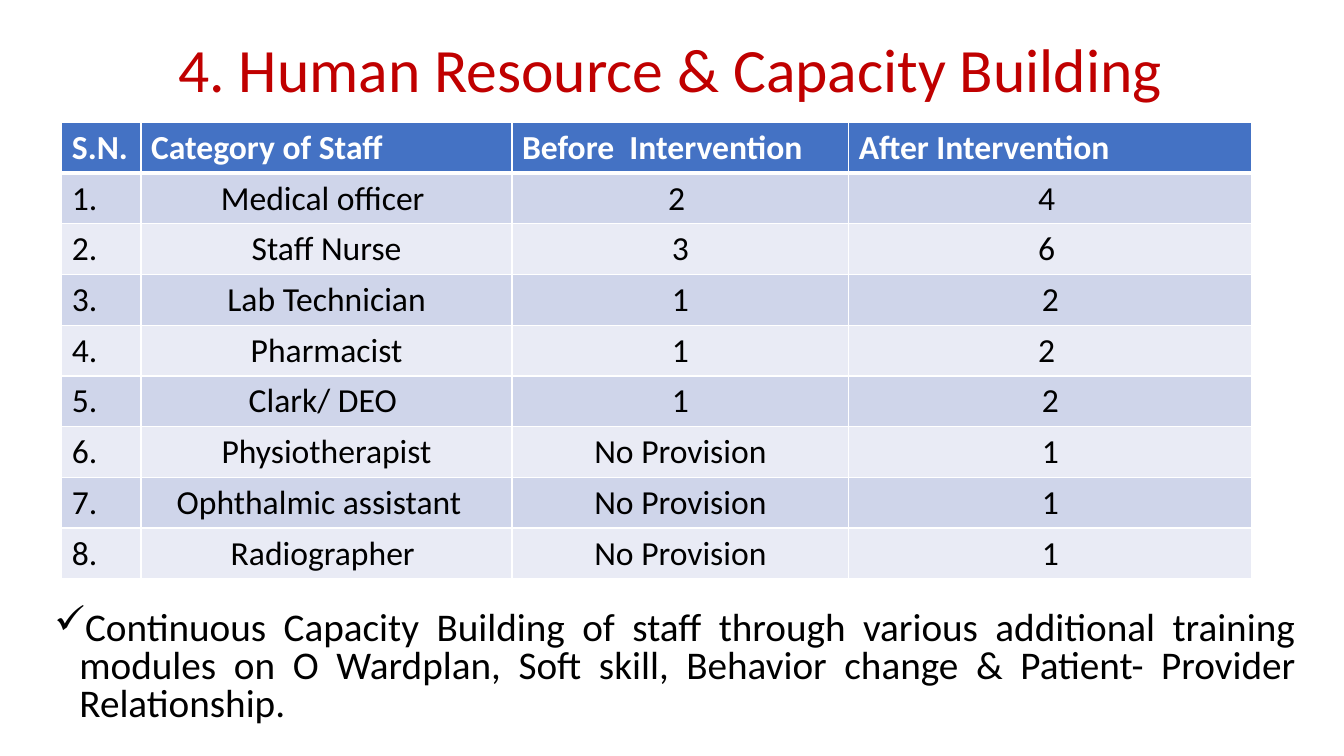
from dataclasses import dataclass

import pptx
import pptx.dml.color
import pptx.enum.text
import pptx.oxml
import pptx.oxml.ns
import pptx.util

# Content
TITLE = "4. Human Resource & Capacity Building"
HEADERS = ("S.N.", "Category of Staff", "Before  Intervention", "After Intervention")
STAFF = (
    ("Medical officer ", "2 ", "4 "),
    ("Staff Nurse", "3", "6 "),
    ("Lab Technician", "1", "2"),
    ("Pharmacist", "1", "2 "),
    ("Clark/ DEO ", "1", "2"),
    ("Physiotherapist", "No Provision", "1"),
    ("Ophthalmic assistant  ", "No Provision", "1"),
    ("Radiographer ", "No Provision", "1"),
)
TRAINING = (
    "Continuous Capacity Building of staff through various additional training "
    "modules on O Wardplan, Soft skill, Behavior change & Patient- Provider Relationship."
)

# Layout in points
SLIDE_SIZE = (960, 540)
TITLE_BOX = (26.64, 15.84, 905.04, 71.28)
TABLE_ORIGIN = (44.2, 87.4)
COLUMN_WIDTHS = (56.6, 265, 240.5, 288)
ROW_HEIGHT = 36.25
TRAINING_BOX = (31.68, 433.44, 900.72, 90)
BULLET_INDENT = 18


@dataclass(frozen=True)
class Theme:
    font: str = "Calibri"
    title_color: str = "C00000"
    text_color: str = "000000"
    header_text: str = "FFFFFF"
    header_fill: str = "4472C4"
    bands: tuple = ("CFD5EA", "E9EBF5")
    border: str = "FFFFFF"
    title_size: int = 44
    table_size: int = 24
    body_size: int = 28
    thin_line: int = 1
    thick_line: int = 3


THEME = Theme()
ALIGN = pptx.enum.text.PP_ALIGN


def points(values):
    return [pptx.util.Pt(value) for value in values]


def rgb(color):
    return pptx.dml.color.RGBColor.from_string(color)


def style(paragraph, size, color, alignment, bold=False):
    paragraph.alignment = alignment
    paragraph.font.name = THEME.font
    paragraph.font.size = pptx.util.Pt(size)
    paragraph.font.bold = bold
    paragraph.font.color.rgb = rgb(color)


def set_borders(cell, top, bottom):
    properties = cell._tc.get_or_add_tcPr()
    sides = (("L", THEME.thin_line), ("R", THEME.thin_line), ("T", top), ("B", bottom))
    for side, width in sides:
        properties.append(pptx.oxml.parse_xml(
            f'<a:ln{side} {pptx.oxml.ns.nsdecls("a")} w="{pptx.util.Pt(width)}">'
            f'<a:solidFill><a:srgbClr val="{THEME.border}"/></a:solidFill></a:ln{side}>'
        ))


def add_title(slide):
    title = slide.shapes.title
    title.left, title.top, title.width, title.height = points(TITLE_BOX)
    frame = title.text_frame
    frame.text = TITLE
    frame.auto_size = pptx.enum.text.MSO_AUTO_SIZE.NONE
    frame.vertical_anchor = pptx.enum.text.MSO_ANCHOR.MIDDLE
    paragraph = frame.paragraphs[0]
    paragraph.line_spacing = 0.9
    style(paragraph, THEME.title_size, THEME.title_color, ALIGN.CENTER)


def add_staff_table(slide):
    rows = [HEADERS] + [(f"{number}.", *row) for number, row in enumerate(STAFF, 1)]
    size = (sum(COLUMN_WIDTHS), ROW_HEIGHT * len(rows))
    table = slide.shapes.add_table(
        len(rows), len(HEADERS), *points(TABLE_ORIGIN + size)).table
    for column, width in zip(table.columns, points(COLUMN_WIDTHS)):
        column.width = width
    for row_index, row in enumerate(rows):
        table.rows[row_index].height = pptx.util.Pt(ROW_HEIGHT)
        is_header = row_index == 0
        fill = THEME.header_fill if is_header else THEME.bands[(row_index - 1) % 2]
        color = THEME.header_text if is_header else THEME.text_color
        top = THEME.thick_line if row_index == 1 else THEME.thin_line
        bottom = THEME.thick_line if is_header else THEME.thin_line
        for column_index, text in enumerate(row):
            cell = table.cell(row_index, column_index)
            cell.text = text
            set_borders(cell, top, bottom)
            cell.fill.solid()
            cell.fill.fore_color.rgb = rgb(fill)
            alignment = ALIGN.LEFT if is_header or column_index == 0 else ALIGN.CENTER
            style(cell.text_frame.paragraphs[0], THEME.table_size, color, alignment, is_header)


def add_training_note(slide):
    frame = slide.shapes.add_textbox(*points(TRAINING_BOX)).text_frame
    frame.word_wrap = True
    frame.text = TRAINING
    paragraph = frame.paragraphs[0]
    paragraph.line_spacing = 0.8
    paragraph.space_before = pptx.util.Pt(10)
    style(paragraph, THEME.body_size, THEME.text_color, ALIGN.JUSTIFY)
    # Check mark with a hanging indent
    properties = paragraph._p.get_or_add_pPr()
    indent = pptx.util.Pt(BULLET_INDENT)
    properties.set("marL", str(indent))
    properties.set("indent", str(-indent))
    bullet = pptx.oxml.parse_xml(f'<a:buChar {pptx.oxml.ns.nsdecls("a")} char="✓"/>')
    properties.find(pptx.oxml.ns.qn("a:defRPr")).addprevious(bullet)


def main():
    presentation = pptx.Presentation()
    presentation.slide_width, presentation.slide_height = points(SLIDE_SIZE)
    slide = presentation.slides.add_slide(presentation.slide_layouts[5])
    add_title(slide)
    add_training_note(slide)
    add_staff_table(slide)
    presentation.save("out.pptx")


if __name__ == "__main__":
    main()
